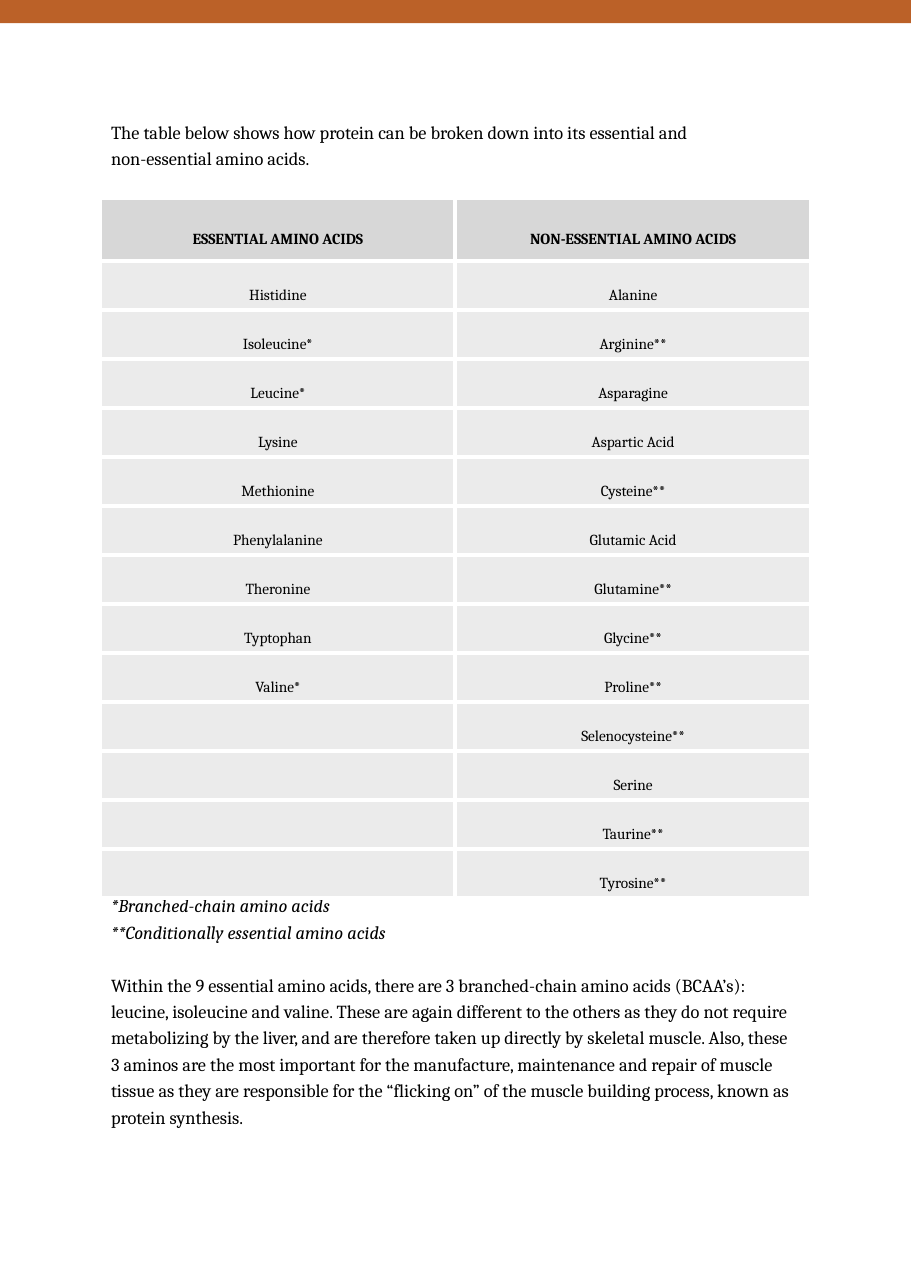
from itertools import zip_longest

from lxml import etree
from pptx import Presentation
from pptx import util as u
from pptx.dml.color import RGBColor
from pptx.enum import shapes, text
from pptx.oxml.ns import qn

# Content
INTRO = [("The table below shows how protein can be broken down into its "
          "essential and non-essential amino acids.", {})]
HEADINGS = ("ESSENTIAL AMINO ACIDS", "NON-ESSENTIAL AMINO ACIDS")
ESSENTIAL = ["Histidine", "Isoleucine*", "Leucine*", "Lysine", "Methionine",
             "Phenylalanine", "Theronine", "Typtophan", "Valine*"]
NON_ESSENTIAL = ["Alanine", "Arginine**", "Asparagine", "Aspartic Acid",
                 "Cysteine**", "Glutamic Acid", "Glutamine**", "Glycine**",
                 "Proline**", "Selenocysteine**", "Serine", "Taurine**",
                 "Tyrosine**"]
NOTES = [
    ("*Branched-chain amino acids", {"italic": True}),
    ("**Conditionally essential amino acids", {"italic": True}),
    ("Within the 9 essential amino acids, there are 3 branched-chain amino "
     "acids (BCAA’s): leucine, isoleucine and valine. These are again "
     "different to the others as they do not require metabolizing by the "
     "liver, and are therefore taken up directly by skeletal muscle. Also, "
     "these 3 aminos are the most important for the manufacture, maintenance "
     "and repair of muscle tissue as they are responsible for the “flicking "
     "on” of the muscle building process, known as protein synthesis.", {}),
]

THEME = {
    "font": "Cambria", "ink": "000000", "band": "BB6128",
    "heading": "D7D7D7", "row": "EBEBEB", "border": "FFFFFF",
    "body_size": 12, "table_size": 10, "border_width": 3,
    "body_spacing": 1.2, "table_spacing": 2.15, "gap": 17.3,
    "cell_bottom": 2.6,
}

# Layout in inches
PAGE_WIDTH, PAGE_HEIGHT = 8.27, 11.69
LEFT, TABLE_WIDTH, NOTES_WIDTH = 0.91, 6.45, 6.4
HEADING_HEIGHT, ROW_HEIGHT = 0.57, 0.42


def apply(target, values):
    for name, value in values.items():
        setattr(target, name, value)


def paint(target, color):
    target.fill.solid()
    target.fill.fore_color.rgb = RGBColor.from_string(color)


def write(para, words, size, **style):
    span = para.add_run()
    span.text = words
    apply(span.font, {"name": THEME["font"], "size": u.Pt(size), **style})
    span.font.color.rgb = RGBColor.from_string(THEME["ink"])


def add_text(page, left, top, width, height, lines):
    box = page.shapes.add_textbox(*map(u.Inches, (left, top, width, height)))
    frame = box.text_frame
    frame.word_wrap = True
    for index, (words, style) in enumerate(lines):
        para = frame.add_paragraph() if index else frame.paragraphs[0]
        para.line_spacing = THEME["body_spacing"]
        if index and not style:
            para.space_before = u.Pt(THEME["gap"])
        write(para, words, THEME["body_size"], **style)


def add_borders(cell):
    properties = cell._tc.get_or_add_tcPr()
    for index, side in enumerate(("a:lnL", "a:lnR", "a:lnT", "a:lnB")):
        line = etree.Element(qn(side), w=str(u.Pt(THEME["border_width"])))
        fill = etree.SubElement(line, qn("a:solidFill"))
        etree.SubElement(fill, qn("a:srgbClr"), val=THEME["border"])
        properties.insert(index, line)


def add_acid_table(page, top):
    rows = [HEADINGS, *zip_longest(ESSENTIAL, NON_ESSENTIAL, fillvalue="")]
    height = HEADING_HEIGHT + ROW_HEIGHT * (len(rows) - 1)
    table = page.shapes.add_table(
        len(rows), len(HEADINGS),
        *map(u.Inches, (LEFT, top, TABLE_WIDTH, height))).table
    apply(table, {"first_row": False, "horz_banding": False})
    for column in table.columns:
        column.width = u.Inches(TABLE_WIDTH / len(HEADINGS))
    for index, values in enumerate(rows):
        heading = index == 0
        table.rows[index].height = u.Inches(
            HEADING_HEIGHT if heading else ROW_HEIGHT)
        for cell, words in zip(table.rows[index].cells, values):
            paint(cell, THEME["heading" if heading else "row"])
            add_borders(cell)
            if heading:
                cell.vertical_anchor = text.MSO_ANCHOR.MIDDLE
            else:
                cell.margin_bottom = u.Pt(THEME["cell_bottom"])
            if words:
                para = cell.text_frame.paragraphs[0]
                apply(para, {"alignment": text.PP_ALIGN.CENTER,
                             "line_spacing": THEME["table_spacing"]})
                write(para, words, THEME["table_size"], bold=heading)


def main():
    deck = Presentation()
    apply(deck, {"slide_width": u.Inches(PAGE_WIDTH),
                 "slide_height": u.Inches(PAGE_HEIGHT)})
    page = deck.slides.add_slide(deck.slide_layouts[6])

    # Top band
    band = page.shapes.add_shape(shapes.MSO_SHAPE.RECTANGLE, 0, 0,
                                 u.Inches(PAGE_WIDTH), u.Inches(0.21))
    band.shadow.inherit = False
    paint(band, THEME["band"])
    band.line.fill.background()

    # Introduction, notes and table
    add_text(page, LEFT, 1.01, 5.75, 0.59, INTRO)
    add_text(page, LEFT, 8.03, NOTES_WIDTH, 2.27, NOTES)
    add_acid_table(page, 1.8)
    deck.save("out.pptx")


if __name__ == "__main__":
    main()
